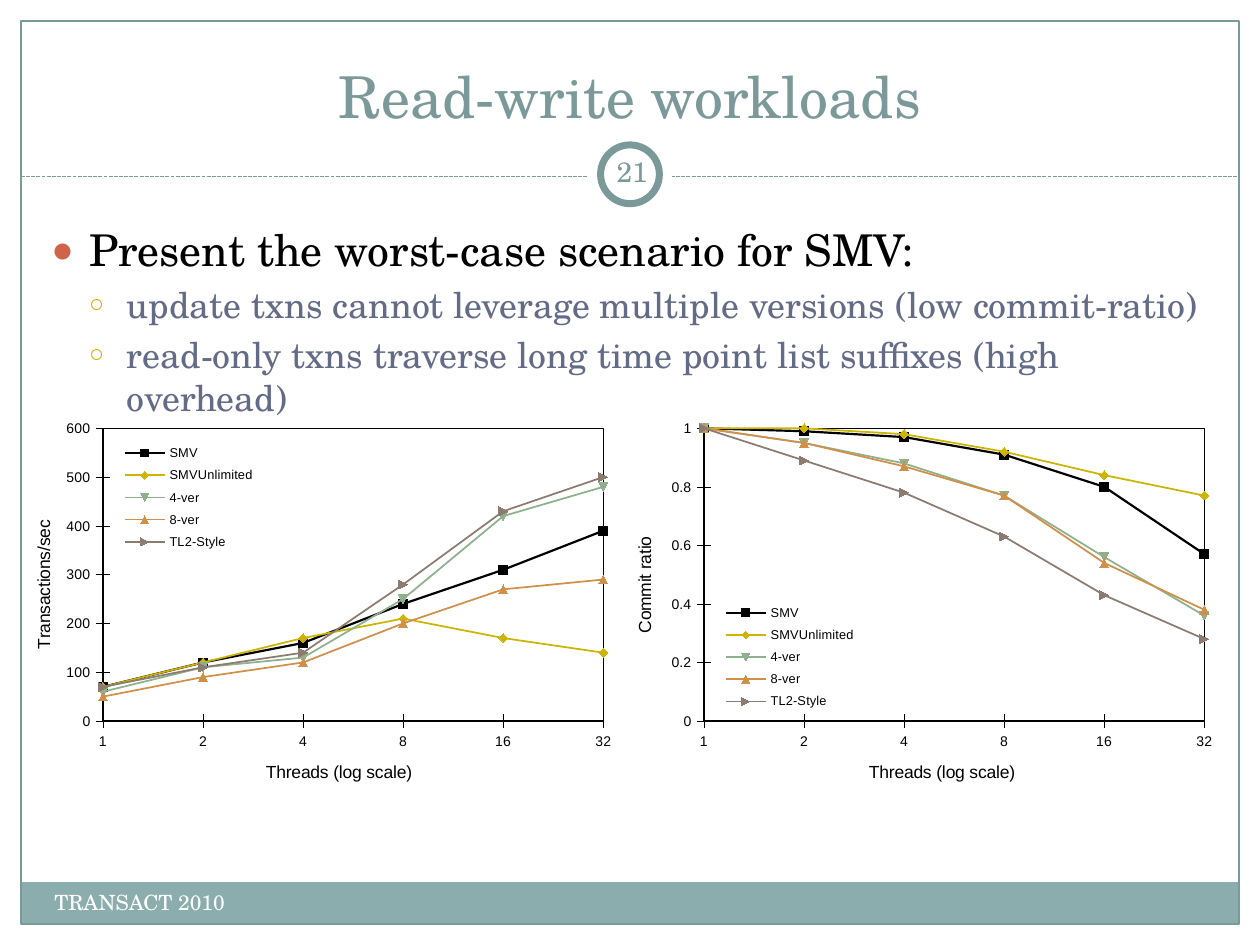
from pptx import Presentation
from pptx.chart.data import CategoryChartData
from pptx.dml.color import RGBColor
from pptx.enum.chart import XL_CHART_TYPE as Kind, XL_LEGEND_POSITION as Side
from pptx.enum.chart import XL_MARKER_STYLE as Mark, XL_TICK_MARK as Tick
from pptx.enum.dml import MSO_LINE as Dash
from pptx.enum.shapes import MSO_CONNECTOR as Link, MSO_SHAPE as Form
from pptx.enum.text import MSO_ANCHOR as Anchor, PP_ALIGN as Align
from pptx.oxml import parse_xml
from pptx.oxml.ns import nsdecls, qn
from pptx.util import Inches, Pt
from lxml import etree

TEAL = RGBColor(0x7C, 0x99, 0x9A)
BAND = RGBColor(0x8C, 0xAD, 0xAE)
WHITE = RGBColor(0xFF, 0xFF, 0xFF)
BLACK = RGBColor(0, 0, 0)
SLATE = RGBColor(0x64, 0x6B, 0x86)
GOLD = RGBColor(0xCC, 0xB4, 0x00)
GREEN = RGBColor(0x8F, 0xB0, 0x8C)
AMBER = RGBColor(0xD1, 0x90, 0x49)
BROWN = RGBColor(0x8C, 0x7B, 0x70)
RED = RGBColor(0xD1, 0x63, 0x49)
SERIF, SANS = "TeX Gyre Schola", "Arial"

deck = Presentation()
deck.slide_width, deck.slide_height = Inches(10), Inches(7.5)
slide = deck.slides.add_slide(deck.slide_layouts[5])
shapes = slide.shapes
UNIT = deck.slide_width / 60


def grid(*cells):
    return [round(n * UNIT) for n in cells]


def place(part, index, target, *share):
    for old in part.findall(qn("c:layout")):
        part.remove(old)
    modes = '<c:xMode val="edge"/><c:yMode val="edge"/>'
    sizes = "".join(f'<c:{k} val="{v}"/>' for k, v in zip("xywh", share))
    part.insert(index, parse_xml(
        f'<c:layout {nsdecls("c")}><c:manualLayout>{target}{modes}{sizes}'
        "</c:manualLayout></c:layout>"))


rule = shapes.add_connector(Link.STRAIGHT, *grid(1, 8.4, 59, 8.4))
rule.line.color.rgb = TEAL
rule.line.width = Pt(0.75)
rule.line.dash_style = Dash.SQUARE_DOT
etree.SubElement(rule._element.spPr, qn("a:effectLst"))

for form, cells, fill, line, width in [
    (Form.RECTANGLE, (1, 42, 58, 2), BAND, None, 0),
    (Form.RECTANGLE, (1, 1, 58, 43), None, TEAL, 0.75),
    (Form.OVAL, (28, 6.3, 4, 4), WHITE, None, 0),
    (Form.OVAL, (28.6, 6.9, 2.8, 2.8), WHITE, TEAL, 4),
]:
    shape = shapes.add_shape(form, *grid(*cells))
    shape.shadow.inherit = False
    if fill is None:
        shape.fill.background()
    else:
        shape.fill.solid()
        shape.fill.fore_color.rgb = fill
    if line is None:
        shape.line.fill.background()
    else:
        shape.line.color.rgb = line
        shape.line.width = Pt(width)

title = shapes.title
title.left, title.top, title.width, title.height = grid(2, 1.5, 56, 5)
foot = shapes.add_textbox(*grid(2, 42.06, 23.5, 2.4))
page = shapes.add_textbox(*grid(28.6, 6.72, 3, 2.88))
for box, text, size, color, align, anchor in [
    (title, "Read-write workloads", 33, TEAL, Align.CENTER, Anchor.BOTTOM),
    (foot, "TRANSACT 2010", 12, WHITE, Align.LEFT, Anchor.TOP),
    (page, "21", 16, TEAL, Align.CENTER, Anchor.MIDDLE),
]:
    frame = box.text_frame
    frame.text = text
    frame.word_wrap = True
    frame.vertical_anchor = anchor
    par = frame.paragraphs[0]
    par.alignment = align
    par.font.name, par.font.size = SERIF, Pt(size)
    par.font.color.rgb = color
page.text_frame.margin_left = page.text_frame.margin_right = Inches(0.05)

THREADS = ["1", "2", "4", "8", "16", "32"]
NAMES = ["SMV", "SMVUnlimited", "4-ver", "8-ver", "TL2-Style"]
COLORS = [BLACK, GOLD, GREEN, AMBER, BROWN]
RATES = [
    [70, 120, 160, 240, 310, 390],
    [70, 120, 170, 210, 170, 140],
    [60, 110, 130, 250, 420, 480],
    [50, 90, 120, 200, 270, 290],
    [70, 110, 140, 280, 430, 500],
]
RATIOS = [
    [1, 0.99, 0.97, 0.91, 0.8, 0.57],
    [1, 1, 0.98, 0.92, 0.84, 0.77],
    [1, 0.95, 0.88, 0.77, 0.56, 0.36],
    [1, 0.95, 0.87, 0.77, 0.54, 0.38],
    [1, 0.89, 0.78, 0.63, 0.43, 0.28],
]

for left, label, rows, top, step, key in [
    (1.38, "Transactions/sec", RATES, 600, 100, 0.11),
    (30, "Commit ratio", RATIOS, 1, 0.2, 0.5),
]:
    data = CategoryChartData()
    data.categories = THREADS
    for name, row in zip(NAMES, rows):
        data.add_series(name, row)
    chart = shapes.add_chart(
        Kind.LINE_MARKERS, *grid(left, 18.72, 28.2, 19.5), data).chart
    chart.has_title = False
    chart.font.name, chart.font.size = SANS, Pt(8)
    chart.font.color.rgb = BLACK
    chart.plots[0].vary_by_categories = False

    for axis, text in [(chart.category_axis, "Threads (log scale)"),
                       (chart.value_axis, label)]:
        axis.has_major_gridlines = False
        axis.major_tick_mark = Tick.CROSS
        axis.minor_tick_mark = Tick.NONE
        axis.format.line.color.rgb = BLACK
        axis.format.line.width = Pt(0.25)
        axis.axis_title.text_frame.text = text
        font = axis.axis_title.text_frame.paragraphs[0].font
        font.name, font.size, font.bold = SANS, Pt(10), False
        font.color.rgb = BLACK
    axis.minimum_scale, axis.maximum_scale, axis.major_unit = 0, top, step
    axis.tick_labels.number_format = "General"
    axis.tick_labels.number_format_is_linked = False
    axis._element.find(qn("c:crosses")).addnext(
        parse_xml(f'<c:crossBetween {nsdecls("c")} val="midCat"/>'))

    for line, color in zip(chart.plots[0].series, COLORS):
        line.smooth = False
        line.format.line.color.rgb = color
        line.format.line.width = Pt(1.25 if color == BLACK else 1)
        line.marker.style, line.marker.size = Mark.AUTOMATIC, 5
        line.marker.format.fill.solid()
        line.marker.format.fill.fore_color.rgb = color
        line.marker.format.line.color.rgb = color

    chart.has_legend = True
    legend = chart.legend
    legend.position, legend.include_in_layout = Side.RIGHT, True
    legend.font.name, legend.font.size = SANS, Pt(7.3)
    legend.font.color.rgb = BLACK
    place(legend._element, 1, "", 0.13, key, 0.28, 0.29)
    area = chart._chartSpace.chart.plotArea
    place(area, 0, '<c:layoutTarget val="inner"/>', 0.125, 0.086, 0.845, 0.715)
    area.append(parse_xml(
        f'<c:spPr {nsdecls("c", "a")}><a:noFill/><a:ln w="9525"><a:solidFill>'
        f'<a:srgbClr val="{BLACK}"/></a:solidFill></a:ln></c:spPr>'))

body = shapes.add_textbox(*grid(1.86, 10.32, 55.8, 8)).text_frame
body.word_wrap = True
for i, (text, level, size, color, sign, tint, scale) in enumerate([
    ("Present the worst-case scenario for SMV:",
     0, 25, BLACK, "●", RED, 85),
    ("update txns cannot leverage multiple versions (low commit-ratio)",
     1, 20.4, SLATE, "○", GOLD, 70),
    ("read-only txns traverse long time point list suffixes (high overhead)",
     1, 20.4, SLATE, "○", GOLD, 70),
]):
    par = body.add_paragraph() if i else body.paragraphs[0]
    par.text, par.level = text, level
    par.space_before = Pt(size / 5)
    par.font.name, par.font.size = SERIF, Pt(size)
    par.font.color.rgb = color
    props = par._p.get_or_add_pPr()
    props.set("marL", str(Inches(0.3 * (level + 1))))
    props.set("indent", str(-Inches(0.3)))
    marks = parse_xml(
        f'<a:pPr {nsdecls("a")}><a:buClr><a:srgbClr val="{tint}"/></a:buClr>'
        f'<a:buSzPct val="{scale * 1000}"/><a:buFont typeface="{SANS}"/>'
        f'<a:buChar char="{sign}"/></a:pPr>')
    rest = props.find(qn("a:defRPr"))
    for mark in list(marks):
        props.append(mark) if rest is None else rest.addprevious(mark)

deck.save("out.pptx")
